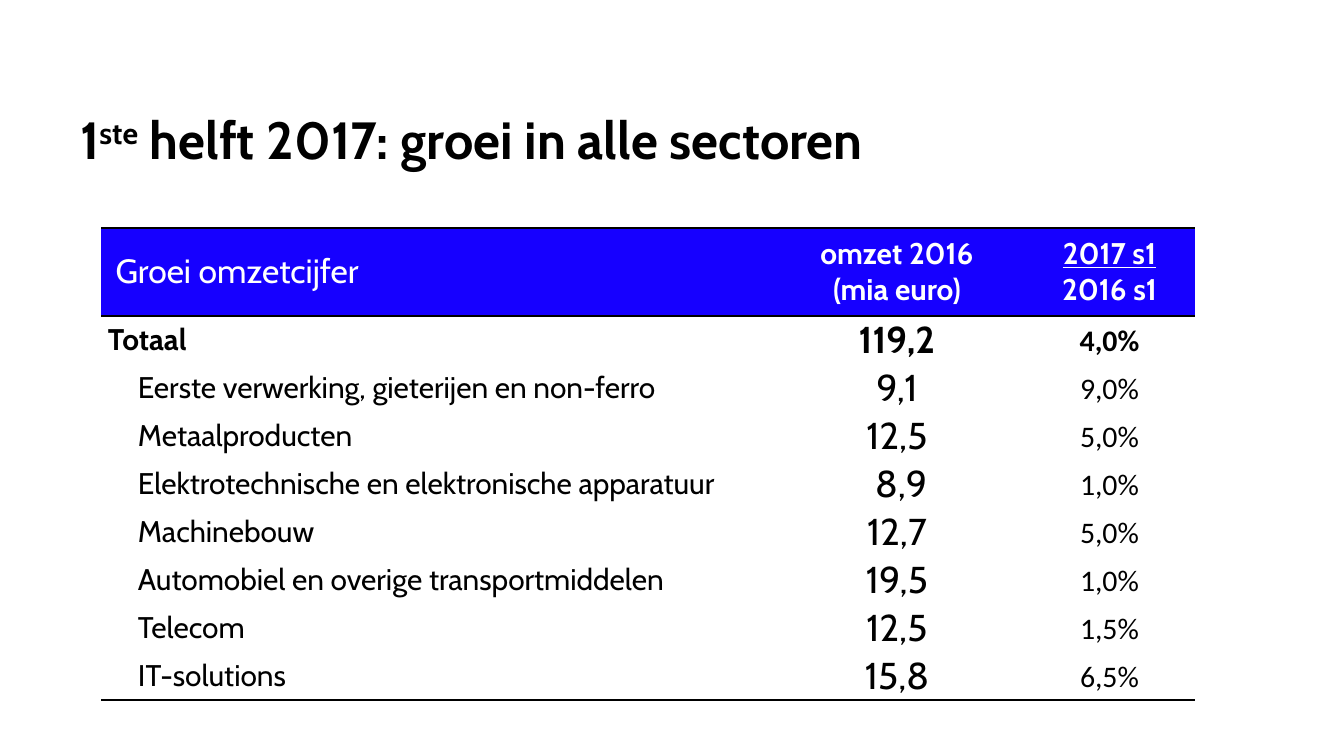
"""Build a slide with a table of turnover growth per sector."""
from lxml.etree import SubElement as Sub
from pptx import Presentation
from pptx.dml.color import RGBColor
from pptx.enum.text import MSO_ANCHOR as Anchor, PP_ALIGN as Align
from pptx.oxml import parse_xml
from pptx.oxml.ns import nsdecls, qn
from pptx.util import Emu, Pt


def px(n):
    return Emu(round(n * 914400 / 134.4))


def style(run, size, color, bold=False, face="Cabin"):
    font = run.font
    font.size, font.bold, font.name = Pt(size), bold, face
    font.color.rgb = RGBColor.from_string(color)


BLACK, WHITE, BLUE = "000000", "FFFFFF", "1600FF"
PLAIN = "{2D5ABB26-0587-4C30-8999-92F81FD0307C}"
ROWS = [
    (" Groei omzetcijfer", "omzet 2016\n(mia euro)", "2017 s1\n2016 s1"),
    ("Totaal", "119,2", "4,0%"),
    ("Eerste verwerking, gieterijen en non-ferro", "9,1", "9,0%"),
    ("Metaalproducten", "12,5", "5,0%"),
    ("Elektrotechnische en elektronische apparatuur", " 8,9", "1,0%"),
    ("Machinebouw", "12,7", "5,0%"),
    ("Automobiel en overige transportmiddelen", "19,5", "1,0%"),
    ("Telecom", "12,5", "1,5%"),
    ("IT-solutions", "15,8", "6,5%"),
]
WIDTHS = [669, 254, 171]
HEAD, LINE = 88, 48
LAST = len(ROWS) - 1

deck = Presentation()
deck.slide_width, deck.slide_height = px(1344), px(756)
slide = deck.slides.add_slide(deck.slide_layouts[6])

title = slide.shapes.add_textbox(px(67), px(106), px(1210), px(66)).text_frame
title.word_wrap = True
title.vertical_anchor = Anchor.MIDDLE
for text in ("1", "ste", " helft 2017: groei in alle sectoren"):
    run = title.paragraphs[0].add_run()
    run.text = text
    style(run, 28, BLACK, True)
title.paragraphs[0].runs[1].font._element.set("baseline", "30000")

table = slide.shapes.add_table(
    len(ROWS), len(WIDTHS), px(101), px(228), px(sum(WIDTHS)), px(HEAD + LAST * LINE)
).table
table.first_row = table.horz_banding = False
table._tbl.tblPr.find(qn("a:tableStyleId")).text = PLAIN
for col, width in zip(table.columns, WIDTHS):
    col.width = px(width)

for r, texts in enumerate(ROWS):
    table.rows[r].height = px(LINE if r else HEAD)
    for c, text in enumerate(texts):
        cell = table.cell(r, c)
        cell.vertical_anchor = Anchor.MIDDLE
        side = 9 if r and c == 2 else 7
        cell.margin_left = px(37 if r > 1 and c == 0 else side)
        cell.margin_right = px(side)
        cell.margin_top = cell.margin_bottom = px(0 if r else 5)
        cell.text_frame.text = text
        size = 18 if r == c == 0 else 20 if r and c == 1 else 16
        bold = r == 1 or (r == 0 and c > 0)
        face = "Calibri" if r and c == 2 else "Cabin"
        for para in cell.text_frame.paragraphs:
            para.alignment = Align.CENTER if c else Align.LEFT
            if r and c == 2:
                para.line_spacing = 1.07
            style(para.runs[0], size, BLACK if r else WHITE, bold, face)
        if r:
            cell.fill.background()
        else:
            cell.fill.solid()
            cell.fill.fore_color.rgb = RGBColor.from_string(BLUE)
        edges = {0: ("lnB", "lnT"), LAST: ("lnB",)}.get(r, ())
        for edge in edges:
            border = parse_xml(f'<a:{edge} {nsdecls("a")} w="12700"/>')
            paint = Sub(border, qn("a:solidFill"))
            Sub(paint, qn("a:srgbClr"), val=BLACK)
            cell._tc.get_or_add_tcPr().insert(0, border)

table.cell(0, 2).text_frame.paragraphs[0].runs[0].font.underline = True

deck.save("out.pptx")
